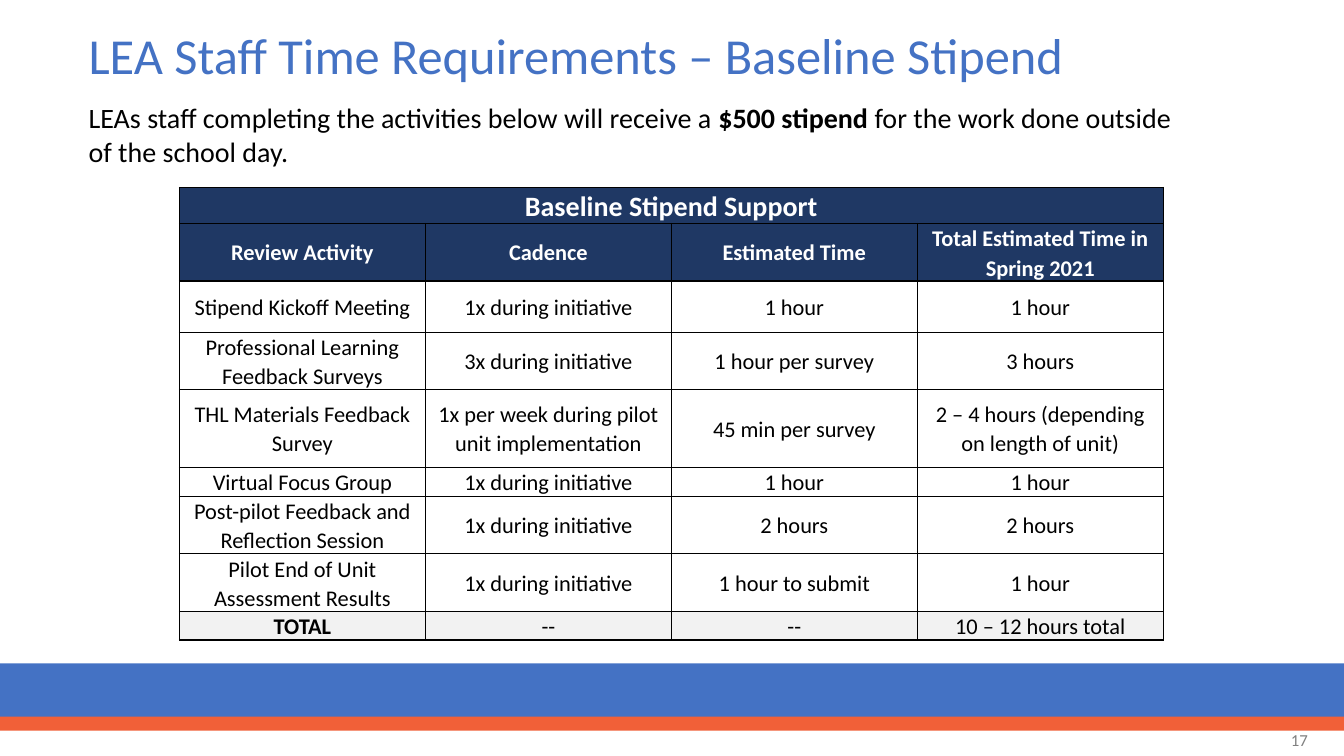
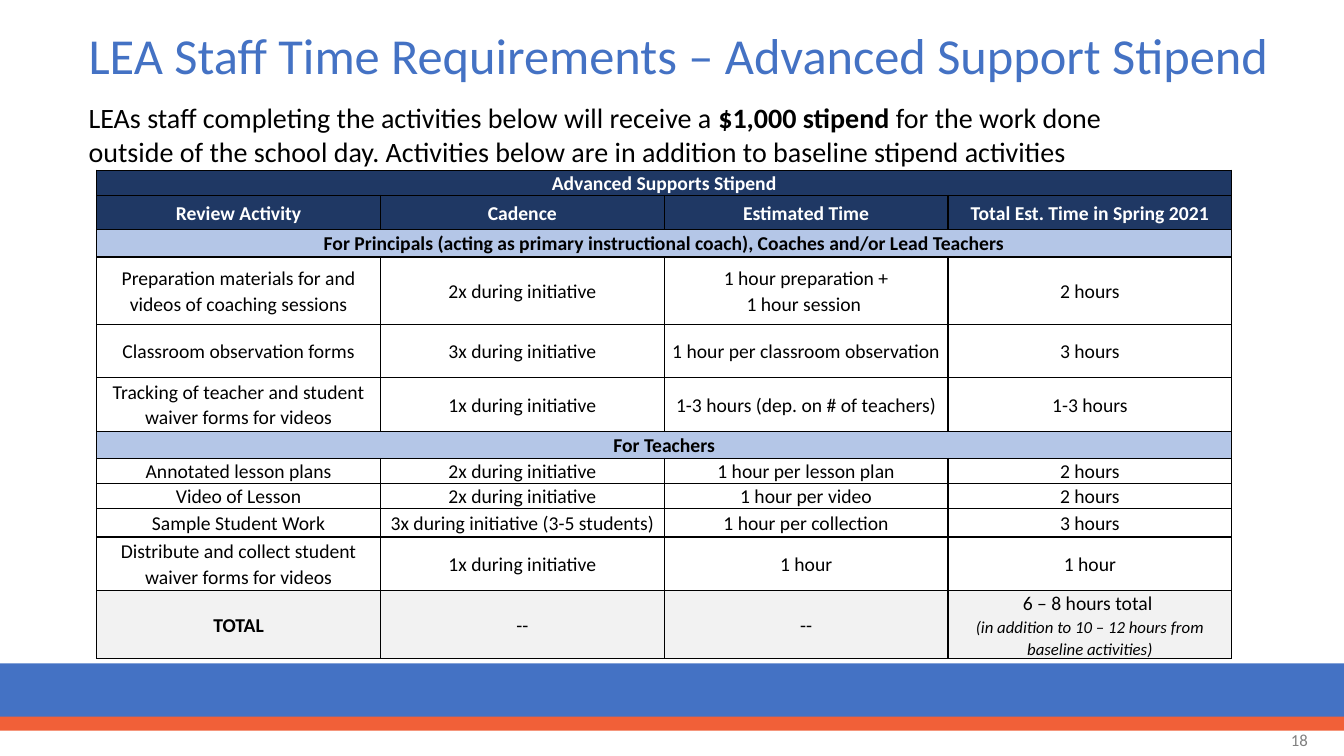
from dataclasses import dataclass

from lxml import etree
from pptx import Presentation
from pptx import util as u
from pptx.dml.color import RGBColor
from pptx.enum import shapes, text
from pptx.oxml import ns


@dataclass(frozen=True)
class RowStyle:
    fill: str
    color: str = "000000"
    bold: bool = False


class Theme:
    font = "Calibri"
    blue, orange = "4472C4", "F16038"
    ink, gray = "000000", "808080"
    title_size, intro_size, number_size, note_size = 36, 20, 12, 12
    title_spacing, cell_spacing = 0.9, 1.07
    border_width = 1
    rows = {
        "banner": RowStyle("1F3864", "FFFFFF", True),
        "header": RowStyle("1F3864", "FFFFFF", True),
        "section": RowStyle("B4C6E7", bold=True),
        "body": RowStyle("FFFFFF"),
        "total": RowStyle("F2F2F2"),
    }


class Deck:
    """Places elements by percent of the slide's width and height."""

    def __init__(self, theme, first_number):
        self.theme = theme
        self.number = first_number
        self.presentation = Presentation()
        self.presentation.slide_width = u.Inches(13.33)
        self.presentation.slide_height = u.Inches(7.5)
        self.slide = None

    def x(self, percent):
        return round(self.presentation.slide_width * percent / 100)

    def y(self, percent):
        return round(self.presentation.slide_height * percent / 100)

    def box(self, left, top, width, height):
        return self.x(left), self.y(top), self.x(width), self.y(height)

    def style(self, paragraph, size, color, bold=False, italic=False):
        font = paragraph.font
        font.name, font.size = self.theme.font, u.Pt(size)
        font.bold, font.italic = bold, italic
        font.color.rgb = RGBColor.from_string(color)

    # Slide frame: bands, title and number
    def new_slide(self, title):
        theme = self.theme
        self.slide = self.presentation.slides.add_slide(self.presentation.slide_layouts[6])
        self.band(87.73, 7.73, theme.blue)
        self.band(94.8, 1.87, theme.orange)
        heading = self.text((5.85, 2.27, 91.2, 10.93), [title], theme.title_size,
                            theme.blue, text.MSO_ANCHOR.MIDDLE)
        heading.line_spacing = theme.title_spacing
        number = self.text((75.55, 95.2, 22.5, 5.33), [str(self.number)],
                           theme.number_size, theme.gray, text.MSO_ANCHOR.MIDDLE)
        number.alignment = text.PP_ALIGN.RIGHT
        self.number += 1

    def band(self, top, height, color):
        shape = self.slide.shapes.add_shape(shapes.MSO_SHAPE.RECTANGLE,
                                            *self.box(0, top, 100, height))
        shape.shadow.inherit = False
        shape.fill.solid()
        shape.fill.fore_color.rgb = RGBColor.from_string(color)
        shape.line.fill.background()

    def text(self, place, parts, size, color, anchor=text.MSO_ANCHOR.TOP):
        """Write the parts as runs; every second part is bold."""
        frame = self.slide.shapes.add_textbox(*self.box(*place)).text_frame
        frame.word_wrap = True
        frame.vertical_anchor = anchor
        paragraph = frame.paragraphs[0]
        self.style(paragraph, size, color)
        for index, part in enumerate(parts):
            run = paragraph.add_run()
            run.text = part
            if index % 2:
                run.font.bold = True
        return paragraph

    def intro(self, *parts):
        self.text((5.85, 12.67, 83.55, 10.27), parts, self.theme.intro_size, self.theme.ink)

    # Table: rows are (kind, height, cell texts); a single text spans the row
    def table(self, left, top, width, rows, size, banner_size, columns=4):
        height = sum(row_height for _, row_height, _ in rows)
        table = self.slide.shapes.add_table(len(rows), columns,
                                            *self.box(left, top, width, height)).table
        table.first_row = table.horz_banding = False
        for row, (kind, row_height, labels) in enumerate(rows):
            table.rows[row].height = self.y(row_height)
            if len(labels) == 1:
                table.cell(row, 0).merge(table.cell(row, columns - 1))
            for column in range(columns):
                label = labels[column] if column < len(labels) else ""
                bold = self.theme.rows[kind].bold or (kind == "total" and column == 0)
                self.cell(table.cell(row, column), label, kind, bold,
                          banner_size if kind == "banner" else size)

    def cell(self, cell, label, kind, bold, size):
        row_style = self.theme.rows[kind]
        cell.margin_left = cell.margin_right = self.x(0.5)
        cell.margin_top = cell.margin_bottom = 0
        cell.vertical_anchor = text.MSO_ANCHOR.MIDDLE
        cell.text = label
        for index, paragraph in enumerate(cell.text_frame.paragraphs):
            note = kind == "total" and index > 0
            paragraph.alignment = text.PP_ALIGN.CENTER
            paragraph.line_spacing = self.theme.cell_spacing
            self.style(paragraph, self.theme.note_size if note else size,
                       row_style.color, bold, note)
        self.borders(cell)
        cell.fill.solid()
        cell.fill.fore_color.rgb = RGBColor.from_string(row_style.fill)

    def borders(self, cell):
        properties = cell._tc.get_or_add_tcPr()
        for side in ("a:lnL", "a:lnR", "a:lnT", "a:lnB"):
            line = etree.SubElement(properties, ns.qn(side),
                                    w=str(u.Pt(self.theme.border_width)))
            fill = etree.SubElement(line, ns.qn("a:solidFill"))
            etree.SubElement(fill, ns.qn("a:srgbClr"), val=self.theme.ink)


BASELINE_ROWS = [
    ("banner", 3.33, ["Baseline Stipend Support"]),
    ("header", 6.8, ["Review Activity", "Cadence", "Estimated Time",
                     "Total Estimated Time in Spring 2021"]),
    ("body", 6.8, ["Stipend Kickoff Meeting", "1x during initiative", "1 hour", "1 hour"]),
    ("body", 6.8, ["Professional Learning Feedback Surveys", "3x during initiative",
                   "1 hour per survey", "3 hours"]),
    ("body", 10.27, ["THL Materials Feedback Survey",
                     "1x per week during pilot unit implementation",
                     "45 min per survey", "2 – 4 hours (depending on length of unit)"]),
    ("body", 3.33, ["Virtual Focus Group", "1x during initiative", "1 hour", "1 hour"]),
    ("body", 6.8, ["Post-pilot Feedback and Reflection Session", "1x during initiative",
                   "2 hours", "2 hours"]),
    ("body", 6.8, ["Pilot End of Unit Assessment Results", "1x during initiative",
                   "1 hour to submit", "1 hour"]),
    ("total", 3.33, ["TOTAL", "--", "--", "10 – 12 hours total"]),
]

ADVANCED_ROWS = [
    ("banner", 3.07, ["Advanced Supports Stipend"]),
    ("header", 4.53, ["Review Activity", "Cadence", "Estimated Time",
                      "Total Est. Time in Spring 2021"]),
    ("section", 3.6, ["For Principals (acting as primary instructional coach), "
                      "Coaches and/or Lead Teachers"]),
    ("body", 8.93, ["Preparation materials for and videos of coaching sessions",
                    "2x during initiative", "1 hour preparation +\n1 hour session ",
                    "2 hours"]),
    ("body", 7.07, ["Classroom observation forms", "3x during initiative",
                    "1 hour per classroom observation ", "3 hours"]),
    ("body", 7.07, ["Tracking of teacher and student waiver forms for videos",
                    "1x during initiative", "1-3 hours (dep. on # of teachers)",
                    "1-3 hours"]),
    ("section", 3.6, ["For Teachers"]),
    ("body", 3.07, ["Annotated lesson plans", "2x during initiative",
                    "1 hour per lesson plan", "2 hours"]),
    ("body", 3.07, ["Video of Lesson", "2x during initiative", "1 hour per video", "2 hours"]),
    ("body", 3.73, ["Sample Student Work", "3x during initiative (3-5 students)",
                    "1 hour per collection", "3 hours"]),
    ("body", 7.07, ["Distribute and collect student waiver forms for videos",
                    "1x during initiative", "1 hour", "1 hour"]),
    ("total", 3.07, ["TOTAL", "--", "--", "6 – 8 hours total \n"
                     "(in addition to 10 – 12 hours from baseline activities)"]),
]


def main():
    deck = Deck(Theme(), first_number=17)
    opening = "LEAs staff completing the activities below will receive a "

    # Baseline stipend
    deck.new_slide("LEA Staff Time Requirements – Baseline Stipend")
    deck.table(13.35, 24.8, 73.2, BASELINE_ROWS, size=16, banner_size=20)
    deck.intro(opening, "$500 stipend ", "for the work done outside of the school day.")

    # Advanced support stipend
    deck.new_slide("LEA Staff Time Requirements – Advanced Support Stipend")
    deck.intro(opening, "$1,000 stipend ", "for the work done outside of the school day. "
               "Activities below are in addition to baseline stipend activities")
    deck.table(7.2, 22.53, 84.45, ADVANCED_ROWS, size=14, banner_size=14)

    deck.presentation.save("out.pptx")


if __name__ == "__main__":
    main()
